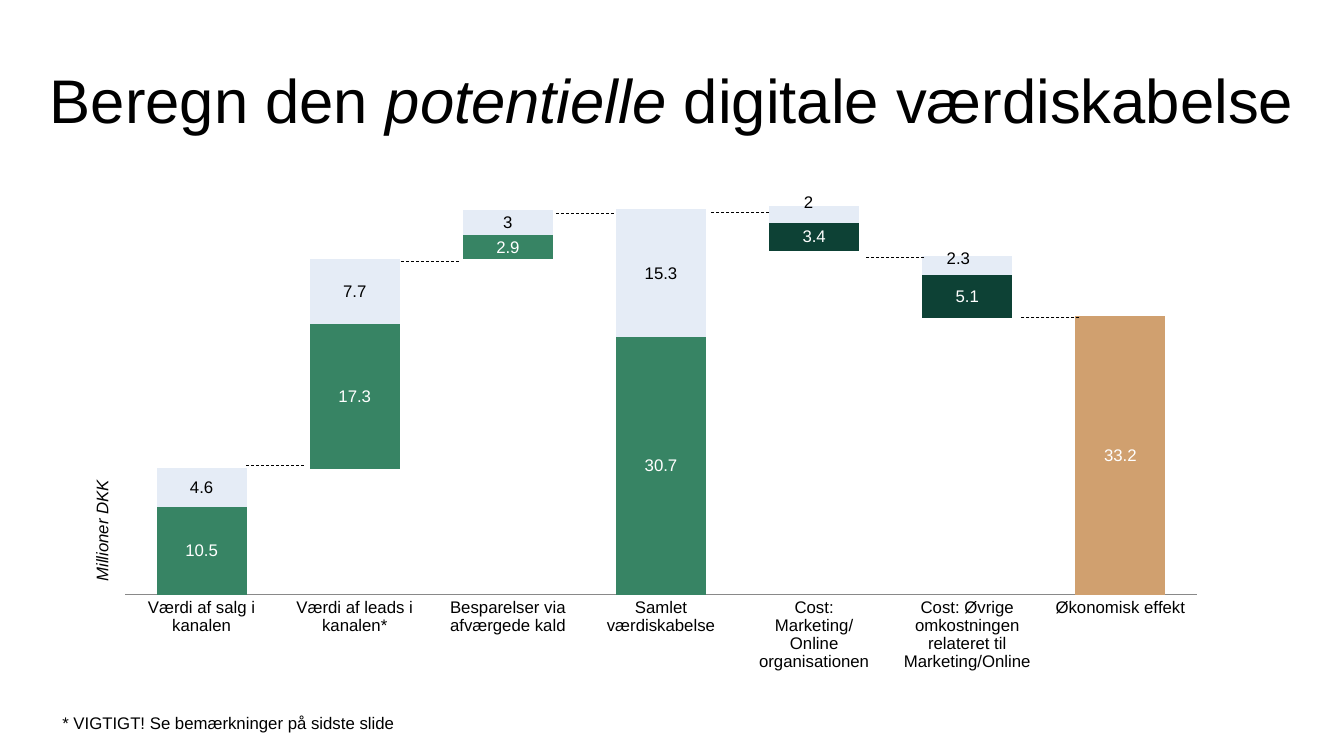
from lxml import etree
from pptx import Presentation
from pptx.chart.data import CategoryChartData as Data
from pptx.dml.color import RGBColor as RGB
from pptx.enum.chart import XL_CHART_TYPE as Kind
from pptx.enum.chart import XL_LABEL_POSITION as Pos
from pptx.enum.chart import XL_TICK_MARK as Tick
from pptx.enum.dml import MSO_LINE as Dash
from pptx.enum.shapes import MSO_CONNECTOR as Join
from pptx.enum.shapes import MSO_SHAPE as Shape
from pptx.enum.text import MSO_ANCHOR as Anchor
from pptx.enum.text import PP_ALIGN as Align
from pptx.oxml import parse_xml
from pptx.oxml.ns import nsdecls, qn
from pptx.util import Cm, Pt

theme = {
    "font": "Arial", "title": Pt(44), "body": Pt(12),
    "black": RGB.from_string("000000"), "white": RGB.from_string("FFFFFF"),
    "gray": RGB.from_string("898989"), "green": RGB.from_string("378464"),
    "dark": RGB.from_string("0D4135"), "gold": RGB.from_string("D0A06F"),
    "pale": RGB.from_string("E5ECF6"),
}


def style(font, size="body", color="black", **extra):
    form = {"name": theme["font"], "size": theme[size], **extra}
    for key, val in form.items():
        setattr(font, key, val)
    font.color.rgb = theme[color]


def paint(fill, color):
    fill.solid()
    fill.fore_color.rgb = theme[color]


deck = Presentation()
deck.slide_width, deck.slide_height = Cm(33.87), Cm(19.05)
slide = deck.slides.add_slide(deck.slide_layouts[6])
shapes = slide.shapes

data = Data()
data.categories = [
    "Værdi af salg i kanalen",
    "Værdi af leads i kanalen*",
    "Besparelser via afværgede kald",
    "Samlet værdiskabelse",
    "Cost: Marketing/Online organisationen",
    "Cost: Øvrige omkostningen relateret til Marketing/Online",
    "Økonomisk effekt",
]
data.add_series("Series 1", [None, 15, 40, None, 41, 33, None])
data.add_series("Series 2", [10.5, 17.3, 2.9, 30.7, 3.4, 5.1, 33.2])
data.add_series("Series 3", [4.6, 7.7, 3, 15.3, 2, 2.3, None])
chart = shapes.add_chart(Kind.COLUMN_STACKED, Cm(2.59), Cm(4.14),
                         Cm(28.14), Cm(13), data).chart
chart.has_legend = chart.has_title = False
style(chart.font)

plot = chart.plots[0]
for key, val in {"gap_width": 70, "overlap": 100,
                 "vary_by_categories": False}.items():
    setattr(plot, key, val)

axis = chart.value_axis
for key, val in {"minimum_scale": 0, "maximum_scale": 50, "visible": False,
                 "has_major_gridlines": False}.items():
    setattr(axis, key, val)
base = chart.category_axis
base.major_tick_mark = base.minor_tick_mark = Tick.NONE
base.format.line.color.rgb = theme["gray"]
base.format.line.width = Pt(0.75)

area = chart.plots[0]._element.getparent()
for old in area.findall(qn("c:layout")):
    area.remove(old)
area.insert(0, parse_xml(
    f'<c:layout {nsdecls("c")}><c:manualLayout><c:layoutTarget val="inner"/>'
    '<c:xMode val="edge"/><c:yMode val="edge"/><c:x val="0.02"/>'
    '<c:y val="0.022"/><c:w val="0.96"/><c:h val="0.813"/>'
    '</c:manualLayout></c:layout>'))

blank, solid, light = plot.series
blank.format.fill.background()
for row, color, ink in [(solid, "green", "white"), (light, "pale", "black")]:
    paint(row.format.fill, color)
    tags = row.data_labels
    tags.show_value = True
    tags.position = Pos.CENTER
    style(tags.font, color=ink)
for spot, color in [(4, "dark"), (5, "dark"), (6, "gold")]:
    paint(solid.points[spot].format.fill, color)

for spot, x, y in [(4, -0.005, -0.023), (5, -0.008, -0.013)]:
    tag = light.points[spot].data_label
    tag.position = Pos.CENTER
    style(tag.font)
    node = light.data_labels._element.findall(qn("c:dLbl"))[spot - 4]
    node.insert(1, parse_xml(
        f'<c:layout {nsdecls("c")}><c:manualLayout><c:x val="{x}"/>'
        f'<c:y val="{y}"/></c:manualLayout></c:layout>'))

for step, y in enumerate([11.73, 6.58, 5.38, 5.36, 6.48, 8]):
    x = 6.15 + 3.91 * step
    link = shapes.add_connector(Join.STRAIGHT, Cm(x + 1.5), Cm(y), Cm(x), Cm(y))
    link.line.color.rgb = theme["black"]
    link.line.width = Pt(0.5)
    link.line.dash_style = Dash.DASH
    etree.SubElement(link._element.spPr, qn("a:effectLst"))

title = shapes.add_shape(Shape.RECTANGLE, 0, Cm(0.76), Cm(33.87), Cm(3.68))
title.shadow.inherit = False
paint(title.fill, "white")
title.line.fill.background()
title.text_frame.word_wrap = True
title.text_frame.vertical_anchor = Anchor.MIDDLE
para = title.text_frame.paragraphs[0]
para.alignment, para.line_spacing = Align.CENTER, 0.9
for text, slant in [("Beregn den ", False), ("potentielle", True),
                    (" digitale værdiskabelse", False)]:
    run = para.add_run()
    run.text = text
    style(run.font, "title", italic=slant)

for text, x, y, width, turn, slant in [
    ("Millioner DKK", 0.89, 12.85, 3.35, 270, True),
    ("* VIGTIGT! Se bemærkninger på sidste slide", 1.32, 17.83, 12.42, 0, False),
]:
    box = shapes.add_textbox(Cm(x), Cm(y), Cm(width), Cm(0.76))
    box.rotation = turn
    box.text_frame.word_wrap = True
    run = box.text_frame.paragraphs[0].add_run()
    run.text = text
    style(run.font, italic=slant)

deck.save("out.pptx")
